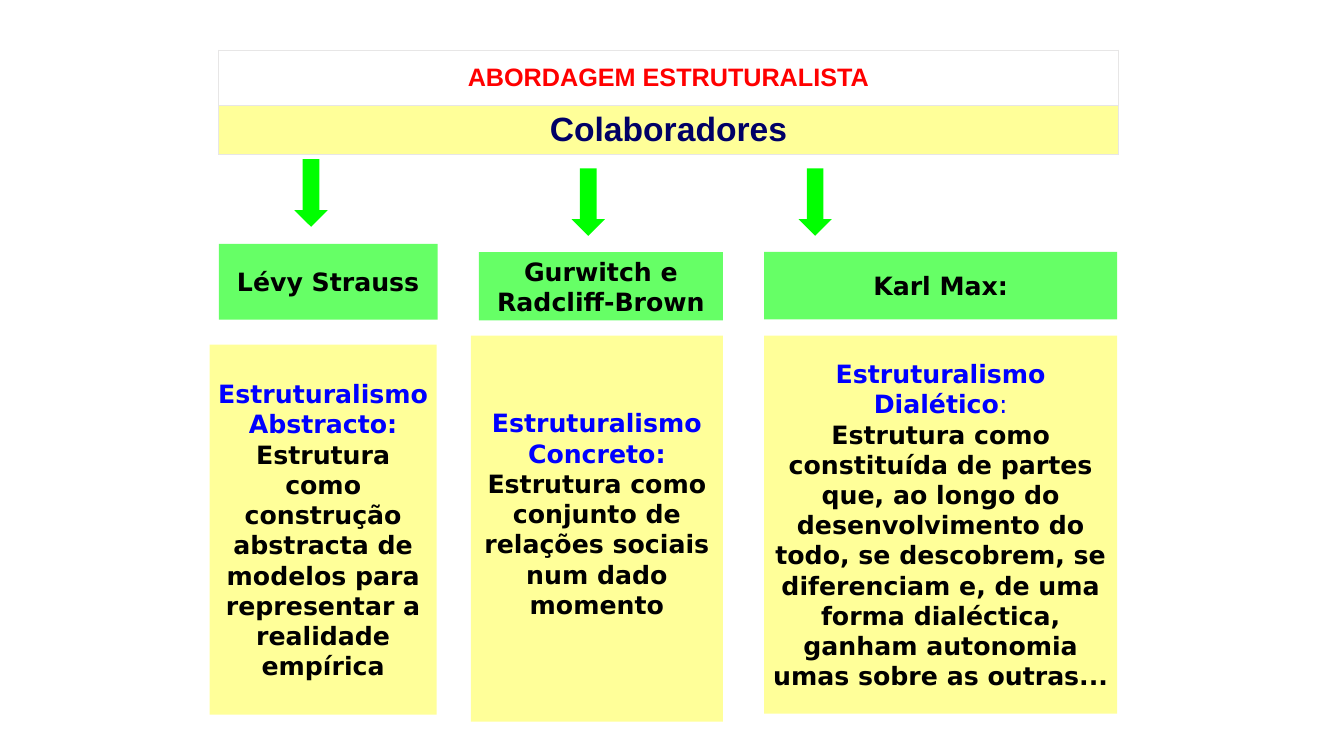
from lxml import etree
from pptx import Presentation
from pptx.dml.color import RGBColor
from pptx.enum.shapes import MSO_SHAPE
from pptx.enum.text import MSO_ANCHOR, PP_ALIGN
from pptx.oxml.ns import qn
from pptx.util import Inches, Pt

RECTANGLE, DOWN_ARROW = MSO_SHAPE.RECTANGLE, MSO_SHAPE.DOWN_ARROW
MIDDLE, CENTER = MSO_ANCHOR.MIDDLE, PP_ALIGN.CENTER

THEME = {
    "red": "FF0000", "navy": "000066", "blue": "0000FF", "black": "000000",
    "white": "FFFFFF", "yellow": "FFFF99", "green": "66FF66", "arrow": "00FF00",
    "border": "E7E6E6",
    "head_font": "Arial", "body_font": "DejaVu Sans",
    "body_size": 18, "head_size": 24,
}

# Content: heading rows as (text, colour, size, fill, row height)
HEADING_AT = (2.17, 0.5, 8.92)
HEADING = [
    ("ABORDAGEM ESTRUTURALISTA", "red", "body_size", "white", 0.55),
    ("Colaboradores", "navy", "head_size", "yellow", 0.48),
]

# Content: one entry per author; spans are (text, colour, bold)
AUTHORS = [
    {
        "name": "Lévy Strauss",
        "arrow": (2.92, 1.58),
        "name_box": (2.17, 2.42, 2.17, 0.75),
        "idea_box": (2.08, 3.42, 2.25, 3.67),
        "idea": [[
            ("Estruturalismo Abstracto: ", "blue", True),
            ("Estrutura como construção abstracta de modelos para "
             "representar a realidade empírica", "black", True),
        ]],
    },
    {
        "name": "Gurwitch e Radcliff-Brown",
        "arrow": (5.67, 1.67),
        "name_box": (4.75, 2.5, 2.42, 0.68),
        "idea_box": (4.67, 3.33, 2.5, 3.83),
        "bottom_inset": 0.35,
        "idea": [
            [("Estruturalismo Concreto:", "blue", True)],
            [("Estrutura como conjunto de relações sociais num dado momento",
              "black", True)],
        ],
    },
    {
        "name": "Karl Max:",
        "arrow": (7.92, 1.67),
        "name_box": (7.58, 2.5, 3.5, 0.67),
        "idea_box": (7.58, 3.33, 3.5, 3.75),
        "idea": [
            [("Estruturalismo Dialético", "blue", True), (":", "blue", False)],
            [("Estrutura como constituída de partes que, ao longo do "
              "desenvolvimento do todo, se descobrem, se diferenciam e, de uma "
              "forma dialéctica, ganham autonomia umas sobre as outras...",
              "black", True)],
        ],
    },
]
ARROW_SIZE = (0.33, 0.67)


def color(name):
    return RGBColor.from_string(THEME[name])


def write(frame, paragraphs, font="body_font", size="body_size"):
    for index, spans in enumerate(paragraphs):
        para = frame.paragraphs[0] if index == 0 else frame.add_paragraph()
        para.alignment = CENTER
        for text, tint, bold in spans:
            span = para.add_run()
            span.text = text
            span.font.name = THEME[font]
            span.font.size = Pt(THEME[size])
            span.font.bold = bold
            span.font.color.rgb = color(tint)


def add_filled(page, kind, place, fill):
    shape = page.shapes.add_shape(kind, *map(Inches, place))
    shape.shadow.inherit = False
    shape.fill.solid()
    shape.fill.fore_color.rgb = color(fill)
    shape.line.fill.background()
    return shape


def add_box(page, place, fill, paragraphs, bottom_inset=0.05):
    frame = add_filled(page, RECTANGLE, place, fill).text_frame
    frame.word_wrap = True
    frame.vertical_anchor = MIDDLE
    frame.margin_left = frame.margin_right = Inches(0.06)
    frame.margin_top, frame.margin_bottom = Inches(0.05), Inches(bottom_inset)
    write(frame, paragraphs)


def fill_cell(cell, fill):
    # Borders come before the fill in the cell properties
    properties = cell._tc.get_or_add_tcPr()
    for side in ("a:lnL", "a:lnR", "a:lnT", "a:lnB"):
        line = etree.SubElement(properties, qn(side), w=str(Pt(1)))
        solid = etree.SubElement(line, qn("a:solidFill"))
        etree.SubElement(solid, qn("a:srgbClr"), val=THEME["border"])
    cell.fill.solid()
    cell.fill.fore_color.rgb = color(fill)


def add_heading(page):
    left, top, width = HEADING_AT
    height = sum(row[-1] for row in HEADING)
    table = page.shapes.add_table(
        len(HEADING), 1, *map(Inches, (left, top, width, height))).table
    for index, (text, tint, size, fill, row_height) in enumerate(HEADING):
        table.rows[index].height = Inches(row_height)
        cell = table.cell(index, 0)
        cell.vertical_anchor = MIDDLE
        fill_cell(cell, fill)
        write(cell.text_frame, [[(text, tint, True)]], "head_font", size)


def main():
    deck = Presentation()
    deck.slide_width, deck.slide_height = Inches(13.33), Inches(7.5)
    page = deck.slides.add_slide(deck.slide_layouts[6])
    add_heading(page)

    # One column per author: arrow, name, idea
    for author in AUTHORS:
        add_filled(page, DOWN_ARROW, author["arrow"] + ARROW_SIZE, "arrow")
        add_box(page, author["name_box"], "green",
                [[(author["name"], "black", True)]])
        add_box(page, author["idea_box"], "yellow", author["idea"],
                author.get("bottom_inset", 0.05))
    deck.save("out.pptx")


if __name__ == "__main__":
    main()
